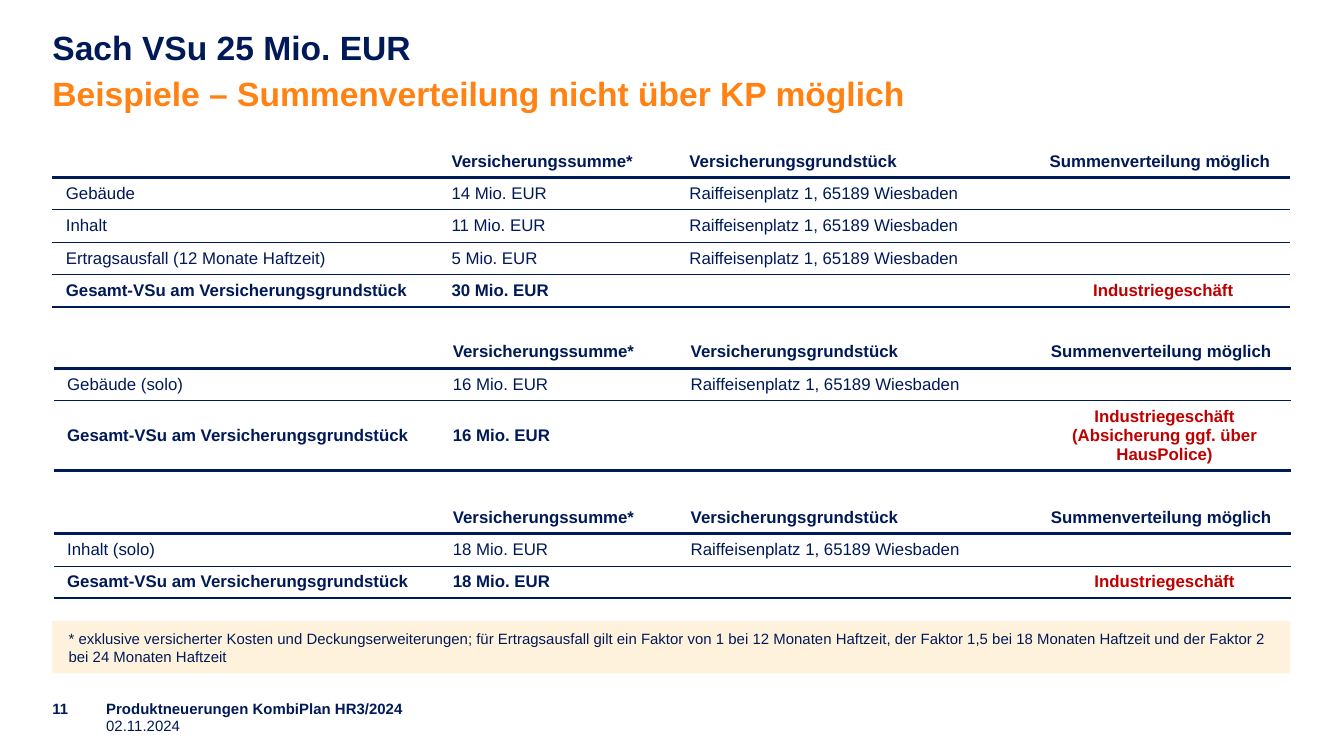
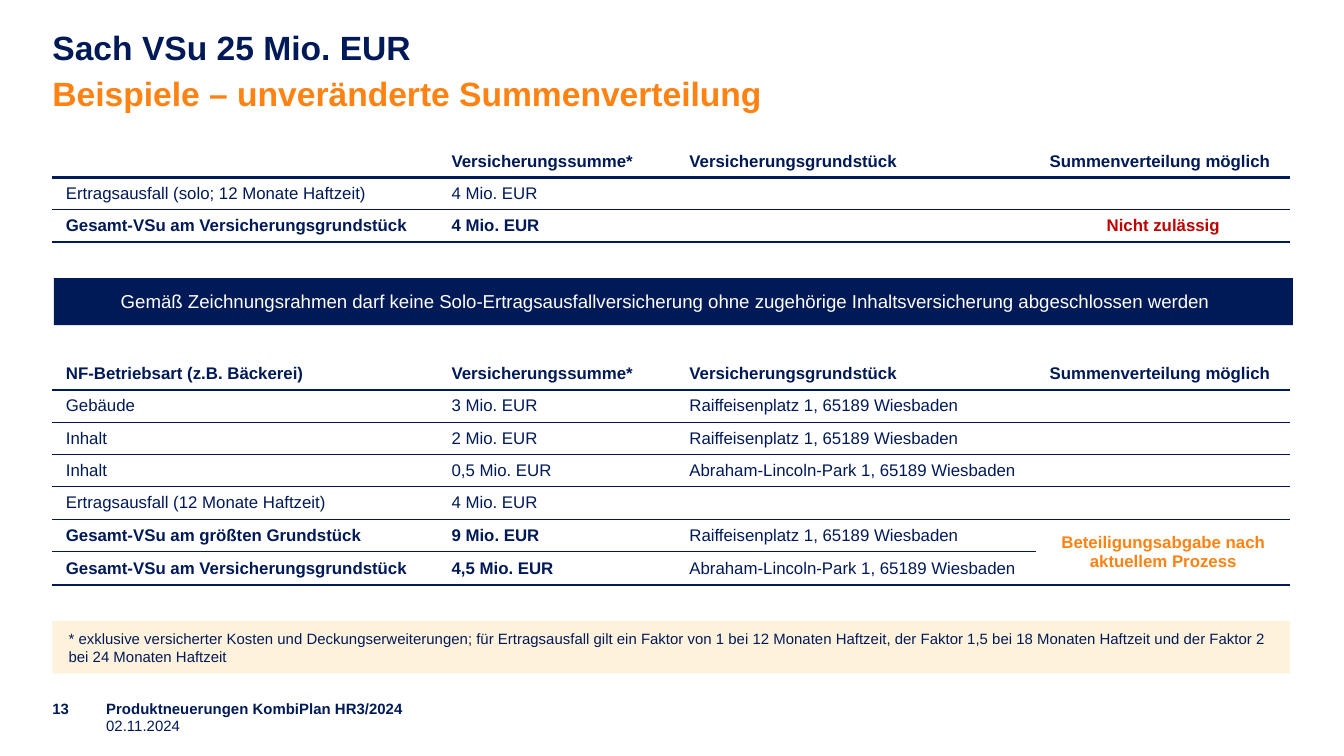
import pptx
import pptx.dml.color
import pptx.enum.shapes
import pptx.enum.text
import pptx.oxml
import pptx.oxml.ns
import pptx.util
import lxml.etree

Inches = pptx.util.Inches
Pt = pptx.util.Pt
RGBColor = pptx.dml.color.RGBColor
PP_ALIGN = pptx.enum.text.PP_ALIGN
MSO_ANCHOR = pptx.enum.text.MSO_ANCHOR
qn = pptx.oxml.ns.qn

NAVY = RGBColor(0x00, 0x19, 0x57)
ORANGE = RGBColor(0xFF, 0x82, 0x13)
RED = RGBColor(0xC0, 0x00, 0x00)
CREAM = RGBColor(0xFF, 0xF2, 0xDC)
WHITE = RGBColor(0xFF, 0xFF, 0xFF)

FONT = "Arial"
LEFT, WIDTH = 0.39, 9.21
COLUMNS = [2.87, 1.77, 2.68, 1.89]
ROW_HEIGHT = 0.24
HAIRLINE, RULE = 0.5, 1.5

SUM_HEADS = ["Versicherungssumme*", "Versicherungsgrundstück", "Summenverteilung möglich"]
SITE_TOTAL = "Gesamt-VSu am Versicherungsgrundstück"
MAIN_SITE = "Raiffeisenplatz 1, 65189 Wiesbaden"
SECOND_SITE = "Abraham-Lincoln-Park 1, 65189 Wiesbaden"
FOOTNOTE = (
    "* exklusive versicherter Kosten und Deckungserweiterungen; für Ertragsausfall gilt ein Faktor "
    "von 1 bei 12 Monaten Haftzeit, der Faktor 1,5 bei 18 Monaten Haftzeit und der Faktor 2 bei "
    "24 Monaten Haftzeit"
)
SOLO_RULE = (
    "Gemäß Zeichnungsrahmen darf keine Solo-Ertragsausfallversicherung ohne zugehörige "
    "Inhaltsversicherung abgeschlossen werden"
)


def write(frame, text, size, color, bold=False, align=PP_ALIGN.LEFT, spacing=None):
    paragraph = frame.paragraphs[0]
    paragraph.alignment = align
    if spacing:
        paragraph.line_spacing = spacing
    run = paragraph.add_run()
    run.text = text
    run.font.name = FONT
    run.font.size = Pt(size)
    run.font.bold = bold
    run.font.color.rgb = color


def set_frame(frame, anchor, horizontal=0, vertical=0):
    frame.word_wrap = True
    frame.auto_size = pptx.enum.text.MSO_AUTO_SIZE.NONE
    frame.vertical_anchor = anchor
    frame.margin_left = frame.margin_right = Inches(horizontal)
    frame.margin_top = frame.margin_bottom = Inches(vertical)


def add_label(slide, box, text, size, color, bold, spacing, anchor, insets=(0, 0)):
    label = slide.shapes.add_textbox(*map(Inches, box))
    set_frame(label.text_frame, anchor, *insets)
    write(label.text_frame, text, size, color, bold, spacing=spacing)


def add_band(slide, box, fill):
    band = slide.shapes.add_shape(
        pptx.enum.shapes.MSO_SHAPE.RECTANGLE, *map(Inches, box))
    band.shadow.inherit = False
    band.fill.solid()
    band.fill.fore_color.rgb = fill
    band.line.fill.background()
    return band


def add_footnote(slide, box):
    band = add_band(slide, box, CREAM)
    set_frame(band.text_frame, MSO_ANCHOR.MIDDLE, 0.12, 0.08)
    write(band.text_frame, FOOTNOTE, 8, NAVY, spacing=1.05)


def add_solo_rule(slide, box):
    left, top, width, height = box
    add_band(slide, box, NAVY)
    add_label(slide, (left + 0.4, top + 0.03, width - 0.4, height - 0.08), SOLO_RULE, 10, WHITE,
              False, 1.05, MSO_ANCHOR.MIDDLE, (0.1, 0.05))


def add_heading(slide, box, title, subtitle):
    left, top, width = box
    heading = slide.shapes.title
    heading.left, heading.top = Inches(left), Inches(top)
    heading.width, heading.height = Inches(width), Inches(0.31)
    set_frame(heading.text_frame, MSO_ANCHOR.TOP)
    write(heading.text_frame, title, 18, NAVY, True)
    add_label(slide, (left, top + 0.33, width, 0.26), subtitle, 18, ORANGE, True, 1.05,
              MSO_ANCHOR.TOP)


def add_footer(slide, box, number):
    left, top = box
    entries = [
        (0, 0, 0.39, number, True),
        (0.4, 0, 4.65, "Produktneuerungen KombiPlan HR3/2024", True),
        (0.4, 0.13, 4.65, "02.11.2024", False),
    ]
    for dx, dy, width, text, bold in entries:
        add_label(slide, (left + dx, top + dy, width, 0.07), text, 8, NAVY, bold, 1.1,
                  MSO_ANCHOR.MIDDLE)


def set_borders(cell, top, bottom):
    properties = cell._tc.get_or_add_tcPr()
    for position, (side, points) in enumerate(
            [("lnL", 0), ("lnR", 0), ("lnT", top), ("lnB", bottom)]):
        line = lxml.etree.Element(qn(f"a:{side}"), w=str(Pt(points)))
        if points:
            fill = lxml.etree.SubElement(line, qn("a:solidFill"))
            lxml.etree.SubElement(fill, qn("a:srgbClr"), val=str(NAVY))
        else:
            lxml.etree.SubElement(line, qn("a:noFill"))
        properties.insert(position, line)


def fill_cell(cell, text, row, column, is_total, verdict_color):
    cell.vertical_anchor = MSO_ANCHOR.MIDDLE
    if not text:
        paragraph = cell.text_frame.paragraphs[0]._p
        end = lxml.etree.SubElement(paragraph, qn("a:endParaRPr"), sz="900")
        lxml.etree.SubElement(end, qn("a:latin"), typeface=FONT)
        return
    is_verdict = column == 3 and row > 0
    write(cell.text_frame, text, 9,
          verdict_color if is_verdict else NAVY,
          row == 0 or (is_total and column != 2),
          PP_ALIGN.CENTER if is_verdict else PP_ALIGN.LEFT)


def add_sums(slide, box, rows, first_head="", last_height=ROW_HEIGHT, verdict_color=RED,
             joined_verdict=False):
    left, top = box
    content = [[first_head, *SUM_HEADS], *rows]
    last = len(content) - 1
    heights = [ROW_HEIGHT] * last + [last_height]
    table = slide.shapes.add_table(
        len(content), len(COLUMNS), Inches(left), Inches(top),
        Inches(WIDTH), Inches(sum(heights))).table
    table.first_row = table.horz_banding = False
    for column, width in zip(table.columns, COLUMNS):
        column.width = Inches(width)
    for row, height in zip(table.rows, heights):
        row.height = Inches(height)
    if joined_verdict:
        table.cell(last - 1, 3).merge(table.cell(last, 3))

    for r, texts in enumerate(content):
        for c, text in enumerate(texts):
            cell = table.cell(r, c)
            cell.fill.background()
            fill_cell(cell, text, r, c, texts[0].startswith("Gesamt"), verdict_color)
            above = 0 if r == 0 or cell.is_spanned else RULE if r == 1 else HAIRLINE
            below = RULE if r in (0, last) or cell.is_merge_origin else HAIRLINE
            set_borders(cell, above, below)


def add_example_slide(deck, number, subtitle):
    slide = deck.slides.add_slide(deck.slide_layouts[5])
    add_heading(slide, (LEFT, 0.2, WIDTH), "Sach VSu 25 Mio. EUR", subtitle)
    add_footnote(slide, (LEFT, 4.62, WIDTH, 0.39))
    add_footer(slide, (LEFT, 5.23), number)
    return slide


def build_not_possible(deck):
    slide = add_example_slide(
        deck, "11", "Beispiele – Summenverteilung nicht über KP möglich")
    add_sums(slide, (LEFT, 1.08), [
        ["Gebäude", "14 Mio. EUR", MAIN_SITE, ""],
        ["Inhalt", "11 Mio. EUR", MAIN_SITE, ""],
        ["Ertragsausfall (12 Monate Haftzeit)", "5 Mio. EUR", MAIN_SITE, ""],
        [SITE_TOTAL, "30 Mio. EUR", "", "Industriegeschäft"],
    ])
    add_sums(slide, (0.4, 2.5), [
        ["Gebäude (solo)", "16 Mio. EUR", MAIN_SITE, ""],
        [SITE_TOTAL, "16 Mio. EUR", "",
         "Industriegeschäft (Absicherung ggf. über HausPolice)"],
    ], last_height=0.51)
    add_sums(slide, (0.4, 3.73), [
        ["Inhalt (solo)", "18 Mio. EUR", MAIN_SITE, ""],
        [SITE_TOTAL, "18 Mio. EUR", "", "Industriegeschäft"],
    ])


def build_unchanged(deck):
    slide = add_example_slide(deck, "13", "Beispiele – unveränderte Summenverteilung")
    add_sums(slide, (LEFT, 1.08), [
        ["Ertragsausfall (solo; 12 Monate Haftzeit)", "4 Mio. EUR", "", ""],
        [SITE_TOTAL, "4 Mio. EUR", "", "Nicht zulässig"],
    ])
    add_sums(slide, (LEFT, 2.66), [
        ["Gebäude", "3 Mio. EUR", MAIN_SITE, ""],
        ["Inhalt", "2 Mio. EUR", MAIN_SITE, ""],
        ["Inhalt", "0,5 Mio. EUR", SECOND_SITE, ""],
        ["Ertragsausfall (12 Monate Haftzeit)", "4 Mio. EUR", "", ""],
        ["Gesamt-VSu am größten Grundstück", "9 Mio. EUR", MAIN_SITE,
         "Beteiligungsabgabe nach aktuellem Prozess"],
        [SITE_TOTAL, "4,5 Mio. EUR", SECOND_SITE, ""],
    ], "NF-Betriebsart (z.B. Bäckerei)", 0.25, ORANGE, joined_verdict=True)
    add_solo_rule(slide, (0.4, 2.07, 9.22, 0.35))


def main():
    deck = pptx.Presentation()
    deck.slide_width = Inches(10)
    deck.slide_height = deck.slide_width * 9 // 16
    build_not_possible(deck)
    build_unchanged(deck)
    deck.save("out.pptx")


if __name__ == "__main__":
    main()
